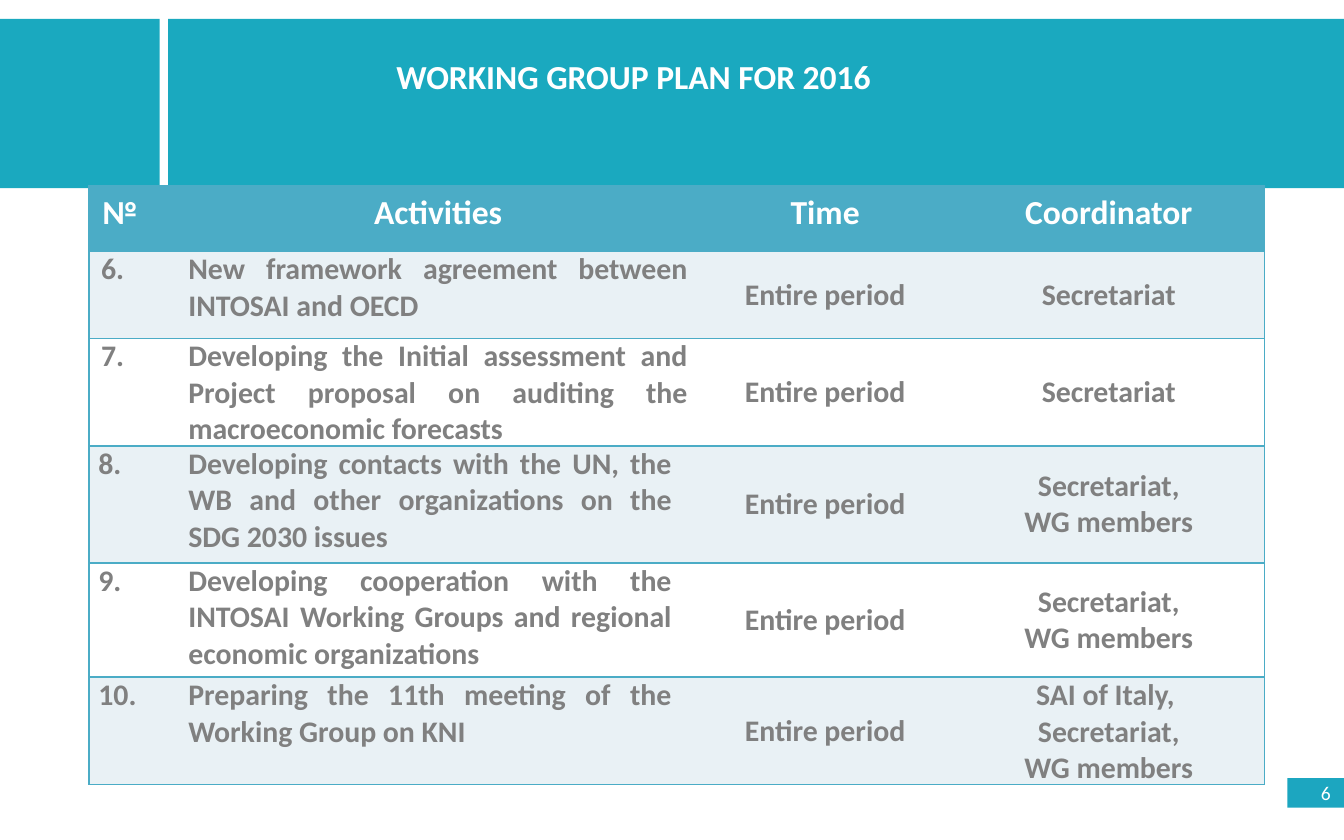
"""Build the slide with the working group plan for 2016."""
from dataclasses import dataclass

from lxml.etree import SubElement
from pptx import Presentation
from pptx.dml.color import RGBColor
from pptx.enum.shapes import MSO_SHAPE
from pptx.enum.text import MSO_ANCHOR, PP_ALIGN
from pptx.oxml.ns import qn
from pptx.shapes.autoshape import Shape
from pptx.slide import Slide
from pptx.table import _Cell
from pptx.text.text import TextFrame
from pptx.util import Cm, Pt

TEAL = RGBColor(0x1A, 0xA9, 0xBF)
NUMBER_TEAL = RGBColor(0x1C, 0xA6, 0xC0)
HEADER_BLUE = RGBColor(0x4B, 0xAC, 0xC6)
BAND = RGBColor(0xE9, 0xF1, 0xF5)
WHITE = RGBColor(0xFF, 0xFF, 0xFF)
GRAY = RGBColor(0x80, 0x80, 0x80)
FONT = "Calibri"

HEADINGS = ("№", "Activities", "Time", "Coordinator")
COLUMN_WIDTHS = (1.7, 9.8, 4.83, 5.89)
HEADER_HEIGHT = 1.24
SIDE_INSET = 0.18
ALIGNMENTS = (PP_ALIGN.LEFT, PP_ALIGN.JUSTIFY, PP_ALIGN.CENTER, PP_ALIGN.CENTER)


@dataclass(frozen=True)
class Block:
    left: float
    top: float
    width: float
    height: float
    color: RGBColor


@dataclass(frozen=True)
class Activity:
    number: str
    task: str
    coordinator: str
    height: float
    number_indent: float = 0
    task_indent: float = 0
    time: str = "Entire period"


BANNERS = (
    Block(3.18, 0.36, 22.22, 3.2, TEAL),
    Block(0, 0.36, 3.02, 3.2, TEAL),
)
PAGE_NUMBER = Block(24.33, 14.71, 1.07, 0.56, NUMBER_TEAL)
ACTIVITIES = (
    Activity("6.", "New framework agreement between INTOSAI and OECD",
             "Secretariat", 1.65, number_indent=0.05),
    Activity("7.\u00a0", "Developing the Initial assessment and Project proposal "
             "on auditing the macroeconomic forecasts",
             "Secretariat", 2.03, number_indent=0.05),
    Activity("8.\u00a0", "Developing contacts with the UN, the WB and other "
             "organizations on the SDG 2030 issues",
             "Secretariat,\nWG members", 2.21, task_indent=0.3),
    Activity("9.\u00a0", "Developing cooperation with the INTOSAI Working Groups "
             "and regional economic organizations",
             "Secretariat,\nWG members", 2.16, task_indent=0.3),
    Activity("10.\u00a0", "Preparing the 11th meeting of the Working Group on KNI",
             "SAI of Italy, \nSecretariat,\nWG members", 2.03, task_indent=0.3),
)


def write(frame: TextFrame, text: str, size: float, color: RGBColor,
          align: PP_ALIGN, bold: bool = True) -> None:
    frame.text = text
    for paragraph in frame.paragraphs:
        paragraph.alignment = align
        for run in paragraph.runs:
            run.font.name = FONT
            run.font.size = Pt(size)
            run.font.bold = bold
            run.font.color.rgb = color


def draw_block(slide: Slide, block: Block) -> Shape:
    shape = slide.shapes.add_shape(
        MSO_SHAPE.RECTANGLE, Cm(block.left), Cm(block.top),
        Cm(block.width), Cm(block.height))
    shape.shadow.inherit = False
    shape.fill.solid()
    shape.fill.fore_color.rgb = block.color
    shape.line.fill.background()
    return shape


def style_cell(cell: _Cell, column: int, fill: RGBColor) -> None:
    last = len(HEADINGS) - 1
    sides = {"lnL": column == 0, "lnR": column == last, "lnT": True, "lnB": True}
    properties = cell._tc.get_or_add_tcPr()
    for side, visible in sides.items():
        border = SubElement(properties, qn(f"a:{side}"), w=str(Pt(1)))
        if visible:
            solid = SubElement(border, qn("a:solidFill"))
            SubElement(solid, qn("a:srgbClr"), val=str(HEADER_BLUE))
        else:
            SubElement(border, qn("a:noFill"))
    cell.fill.solid()
    cell.fill.fore_color.rgb = fill


def draw_plan(slide: Slide) -> None:
    heights = (HEADER_HEIGHT, *(activity.height for activity in ACTIVITIES))
    plan = slide.shapes.add_table(
        len(heights), len(HEADINGS), Cm(1.68), Cm(3.51),
        Cm(sum(COLUMN_WIDTHS)), Cm(sum(heights))).table
    plan.first_row = plan.horz_banding = False
    for column, width in zip(plan.columns, COLUMN_WIDTHS):
        column.width = Cm(width)
    for row, height in zip(plan.rows, heights):
        row.height = Cm(height)

    for column, heading in enumerate(HEADINGS):
        cell = plan.cell(0, column)
        style_cell(cell, column, HEADER_BLUE)
        align = PP_ALIGN.CENTER if column else PP_ALIGN.LEFT
        write(cell.text_frame, heading, 18, WHITE, align)

    for row, activity in enumerate(ACTIVITIES, start=1):
        entries = (activity.number, activity.task, activity.time, activity.coordinator)
        for column, entry in enumerate(entries):
            cell = plan.cell(row, column)
            style_cell(cell, column, BAND if row % 2 else WHITE)
            cell.margin_left = cell.margin_right = Cm(SIDE_INSET)
            cell.margin_top = cell.margin_bottom = 0
            cell.vertical_anchor = MSO_ANCHOR.MIDDLE if column > 1 else MSO_ANCHOR.TOP
            write(cell.text_frame, entry, 16, GRAY, ALIGNMENTS[column])
        plan.cell(row, 0).margin_left = Cm(SIDE_INSET + activity.number_indent)
        plan.cell(row, 1).margin_right = Cm(SIDE_INSET + activity.task_indent)


def main() -> None:
    presentation = Presentation()
    presentation.slide_width = Cm(25.4)
    presentation.slide_height = Cm(15.88)
    slide = presentation.slides.add_slide(presentation.slide_layouts[6])

    for banner in BANNERS:
        draw_block(slide, banner)
    page_number = draw_block(slide, PAGE_NUMBER).text_frame
    page_number.vertical_anchor = MSO_ANCHOR.MIDDLE
    write(page_number, "6", 10.5, WHITE, PP_ALIGN.RIGHT, bold=False)

    title = slide.shapes.add_textbox(Cm(7.24), Cm(0.94), Cm(9.58), Cm(1.02)).text_frame
    title.word_wrap = False
    write(title, "WORKING GROUP PLAN FOR 2016", 18, WHITE, PP_ALIGN.LEFT)

    draw_plan(slide)
    presentation.save("out.pptx")


if __name__ == "__main__":
    main()
